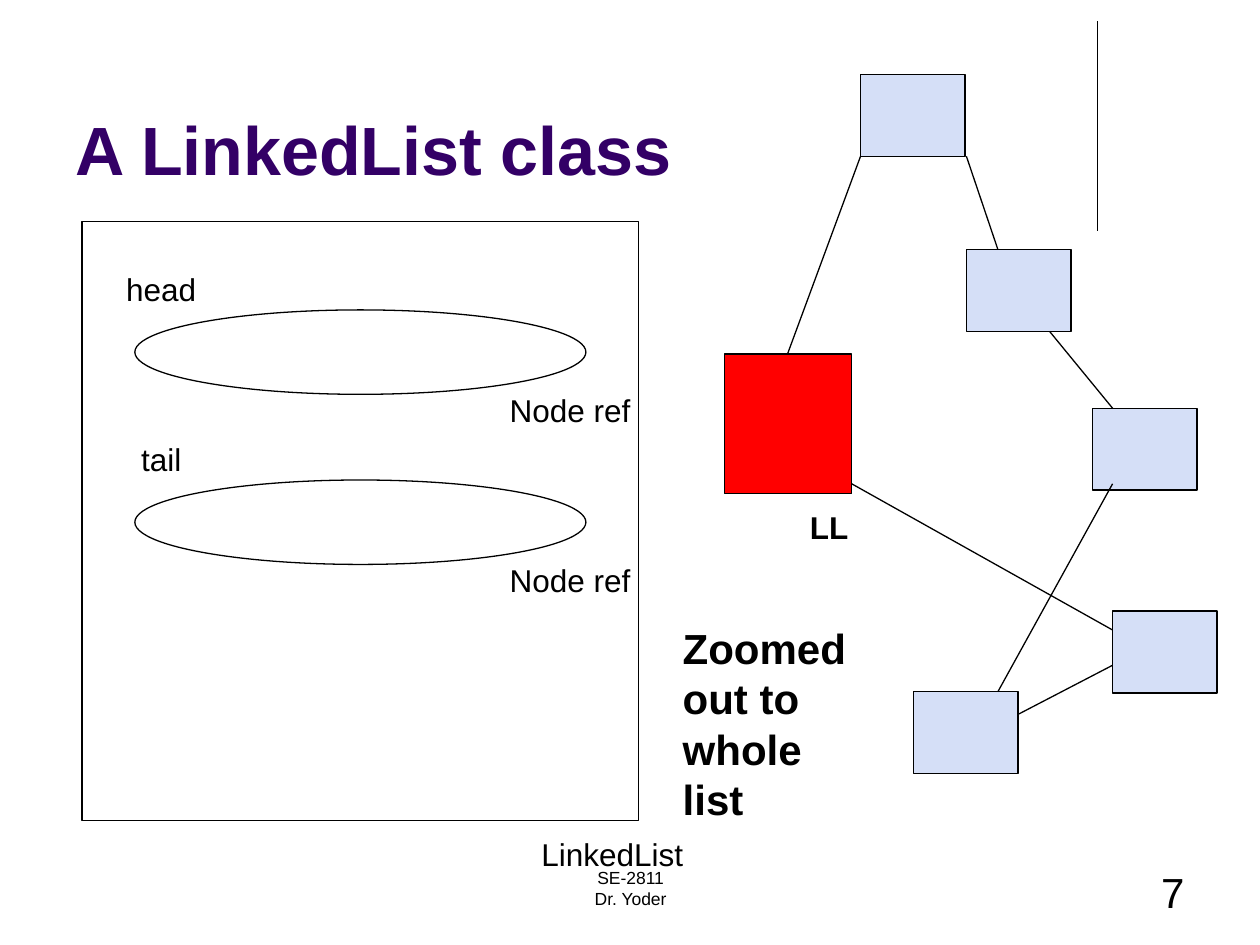
import pptx
import pptx.util
import pptx.dml.color
import pptx.enum.shapes
import pptx.enum.text
import pptx.oxml.ns
import lxml.etree

Inches = pptx.util.Inches
Pt = pptx.util.Pt
RGBColor = pptx.dml.color.RGBColor
MSO_SHAPE = pptx.enum.shapes.MSO_SHAPE
PP_ALIGN = pptx.enum.text.PP_ALIGN
MSO_ANCHOR = pptx.enum.text.MSO_ANCHOR

BLACK = RGBColor(0x00, 0x00, 0x00)
PURPLE = RGBColor(0x33, 0x00, 0x66)
NODE_BLUE = RGBColor(0xD5, 0xDF, 0xF7)
RED = RGBColor(0xFF, 0x00, 0x00)

prs = pptx.Presentation()
prs.slide_width = Inches(10)
prs.slide_height = Inches(7.5)
s = prs.slides.add_slide(prs.slide_layouts[6])


def add_text(lines, x, y, w, h, size, color=BLACK, bold=False,
             align=PP_ALIGN.LEFT, anchor=MSO_ANCHOR.TOP):
    tf = s.shapes.add_textbox(Inches(x), Inches(y), Inches(w), Inches(h)).text_frame
    tf.word_wrap = True
    tf.vertical_anchor = anchor
    for i, line in enumerate(lines):
        p = tf.paragraphs[0] if i == 0 else tf.add_paragraph()
        p.alignment = align
        r = p.add_run()
        r.text = line
        r.font.name = "Arial"
        r.font.size = Pt(size)
        r.font.bold = bold
        r.font.color.rgb = color


def add_outlined(kind, x, y, w, h, fill=None):
    sp = s.shapes.add_shape(kind, Inches(x), Inches(y), Inches(w), Inches(h))
    sp.shadow.inherit = False
    if fill is None:
        sp.fill.background()
    else:
        sp.fill.solid()
        sp.fill.fore_color.rgb = fill
    sp.line.color.rgb = BLACK
    sp.line.width = Pt(0.75)


add_text(["A LinkedList class"], 0.5, 0.3, 9, 1.25, 39, PURPLE, True,
         anchor=MSO_ANCHOR.BOTTOM)
add_text(["SE-2811", "Dr. Yoder"], 3.42, 6.83, 3.17, 0.5, 10, align=PP_ALIGN.CENTER)
add_text(["7"], 7.17, 6.83, 2.33, 0.5, 24, align=PP_ALIGN.RIGHT)

add_outlined(MSO_SHAPE.RECTANGLE, 0.65, 1.76, 4.42, 4.75)
labels = [("LinkedList", 4.16, 6.56)]
for field, y in [("head", 2.08), ("tail", 3.43)]:
    add_outlined(MSO_SHAPE.OVAL, 1.07, y + 0.38, 3.58, 0.67)
    labels += [(field, 0.58, y), ("Node ref ", 3.86, y + 0.96)]
for label, x, y in labels:
    add_text([label], x, y, 1.4, 0.43, 18,
             align=PP_ALIGN.CENTER, anchor=MSO_ANCHOR.MIDDLE)

nodes = [(6.83, 0.59), (7.67, 1.98), (8.67, 3.24), (8.83, 4.85), (7.25, 5.49)]
for x, y in nodes:
    add_outlined(MSO_SHAPE.RECTANGLE, x, y, 0.83, 0.65, NODE_BLUE)
add_outlined(MSO_SHAPE.RECTANGLE, 5.75, 2.81, 1.01, 1.11, RED)

links = [
    (8.71, 0.17, 8.71, 1.83),
    (7.67, 1.24, 7.92, 1.98),
    (8.33, 2.63, 8.83, 3.24),
    (8.83, 3.84, 7.92, 5.49),
    (8.08, 5.67, 8.83, 5.28),
    (6.25, 2.81, 6.83, 1.24),
    (6.76, 3.84, 8.83, 5),
]
for x1, y1, x2, y2 in links:
    link = s.shapes.add_connector(pptx.enum.shapes.MSO_CONNECTOR.STRAIGHT,
                                  Inches(x1), Inches(y1), Inches(x2), Inches(y2))
    link.line.color.rgb = BLACK
    link.line.width = Pt(0.75)
    lxml.etree.SubElement(link._element.spPr, pptx.oxml.ns.qn("a:effectLst"))

add_text(["LL"], 6.33, 3.98, 0.6, 0.4, 18, bold=True)
add_text(["Zoomed out to whole list"], 5.32, 4.31, 1.68, 2.28, 24, bold=True,
         anchor=MSO_ANCHOR.BOTTOM)

prs.save("out.pptx")
